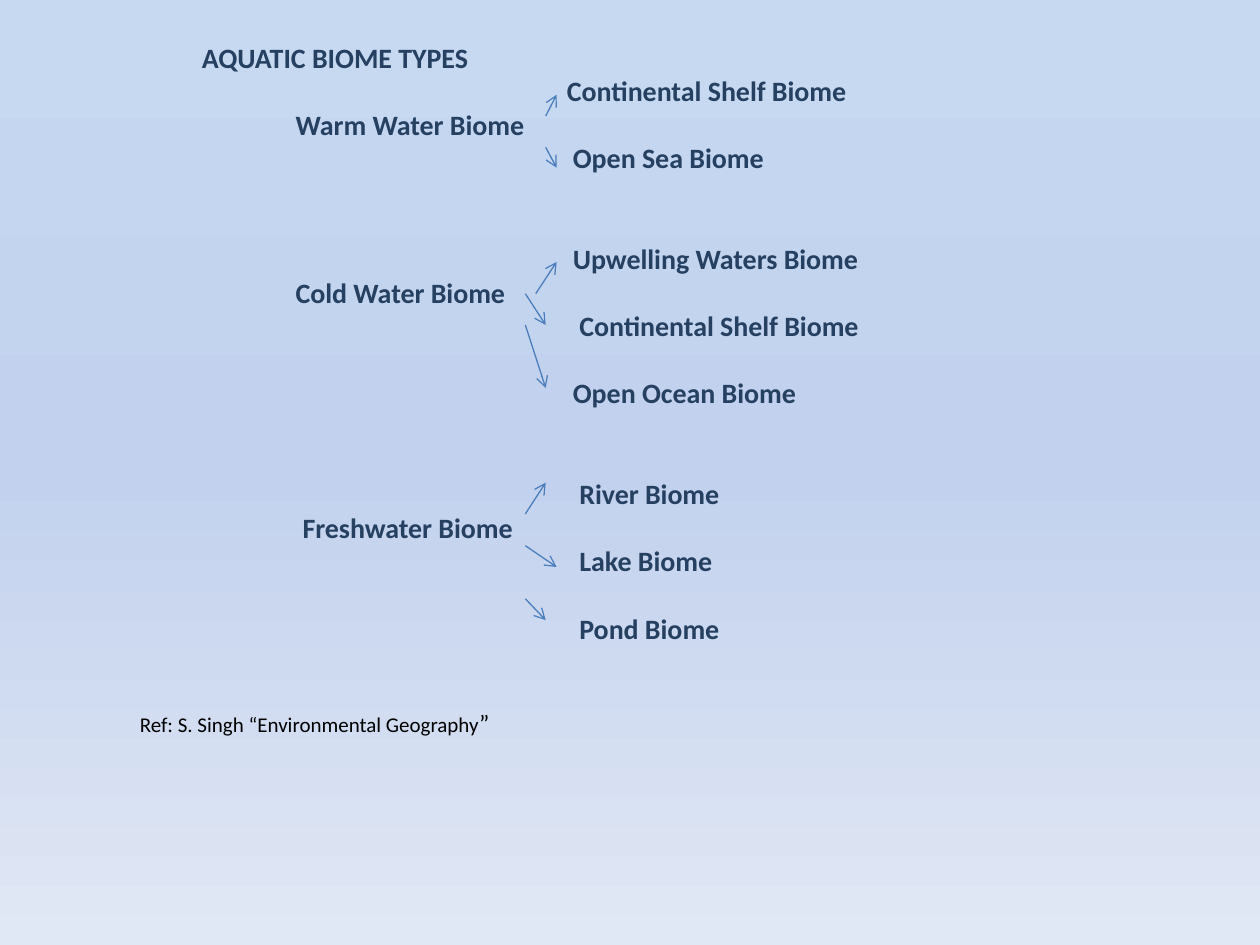
from copy import deepcopy

from lxml.etree import SubElement
from pptx import Presentation
from pptx.dml.color import RGBColor as Rgb
from pptx.enum.shapes import MSO_CONNECTOR as Connector
from pptx.enum.text import MSO_ANCHOR as Anchor, PP_ALIGN as Align
from pptx.oxml.ns import qn
from pptx.util import Cm, Pt

# Content: (indent in cm, blank lines above, text)
OUTLINE = [
    (2.17, 0, "AQUATIC BIOME TYPES"),
    (9.53, 0, "Continental Shelf Biome"),
    (4.06, 0, "Warm Water Biome"),
    (9.65, 0, "Open Sea Biome"),
    (9.65, 2, "Upwelling Waters Biome"),
    (4.06, 0, "Cold Water Biome"),
    (9.78, 0, "Continental Shelf Biome"),
    (9.65, 1, "Open Ocean Biome"),
    (9.78, 2, "River Biome"),
    (4.20, 0, "Freshwater Biome"),
    (9.78, 0, "Lake Biome"),
    (9.78, 1, "Pond Biome"),
]
REFERENCE = ("Ref: S. Singh “Environmental Geography", "”")
REFERENCE_INDENT, REFERENCE_GAP = 0.92, 1.77

# Arrows from each biome to its types: (x1, y1, x2, y2) in cm
ARROWS = [
    (11.00, 2.34, 11.22, 1.91),
    (11.00, 2.97, 11.22, 3.38),
    (10.80, 5.92, 11.22, 5.28),
    (10.59, 5.92, 11.00, 6.55),
    (10.59, 6.55, 11.00, 7.82),
    (10.59, 10.36, 11.00, 9.73),
    (10.59, 11.00, 11.22, 11.43),
    (10.59, 12.07, 11.00, 12.50),
]

THEME = {
    "font": "Calibri",
    "heading": Rgb.from_string("254061"),
    "reference": Rgb.from_string("000000"),
    "arrow": Rgb.from_string("4B7EBC"),
    "background": [(0, "C6D9F1"), (0.5, "C2D1ED"), (1, "E1E8F5")],
    "heading_size": 16,
    "reference_sizes": (12, 14),
    "line_pitch": 19.2,
    "arrow_width": 0.75,
}


def paint_background(slide):
    fill = slide.background.fill
    fill.gradient()
    fill.gradient_angle = 270
    stop_list = slide.element.find(".//" + qn("a:gsLst"))
    stop_list.append(deepcopy(stop_list[0]))
    for stop, (position, color) in zip(fill.gradient_stops, THEME["background"]):
        stop.position = position
        stop.color.rgb = Rgb.from_string(color)


def place_line(paragraph, indent, blank_lines):
    paragraph.alignment = Align.LEFT
    paragraph.line_spacing = Pt(THEME["line_pitch"])
    paragraph.space_before = Pt(THEME["line_pitch"] * blank_lines)
    properties = paragraph._p.get_or_add_pPr()
    properties.set("marL", str(Cm(indent)))
    properties.set("indent", "0")


def style_run(run, size, color, bold):
    run.font.name = THEME["font"]
    run.font.size = Pt(size)
    run.font.color.rgb = color
    run.font.bold = bold


def add_outline(slide):
    frame = slide.shapes.add_textbox(Cm(1.9), Cm(0.81), Cm(21.6), Cm(14.1)).text_frame
    frame.word_wrap = True
    frame.vertical_anchor = Anchor.TOP
    frame.margin_left = frame.margin_right = frame.margin_top = frame.margin_bottom = 0

    # Heading, biomes and their types
    frame.text = "\n".join(label for _, _, label in OUTLINE)
    for paragraph, (indent, blank_lines, _) in zip(frame.paragraphs, OUTLINE):
        place_line(paragraph, indent, blank_lines)
        style_run(paragraph.runs[0], THEME["heading_size"], THEME["heading"], True)

    # Reference, with its larger closing quote
    reference = frame.add_paragraph()
    place_line(reference, REFERENCE_INDENT, REFERENCE_GAP)
    for words, size in zip(REFERENCE, THEME["reference_sizes"]):
        run = reference.add_run()
        run.text = words
        style_run(run, size, THEME["reference"], False)


def add_arrow(slide, ends):
    arrow = slide.shapes.add_connector(Connector.STRAIGHT, *map(Cm, ends))
    arrow.line.color.rgb = THEME["arrow"]
    arrow.line.width = Pt(THEME["arrow_width"])
    SubElement(arrow.line._get_or_add_ln(), qn("a:tailEnd"), type="arrow")
    SubElement(arrow._element.spPr, qn("a:effectLst"))


def main():
    deck = Presentation()
    deck.slide_width, deck.slide_height = Cm(25.4), Cm(19.05)
    slide = deck.slides.add_slide(deck.slide_layouts[6])
    paint_background(slide)
    add_outline(slide)
    for ends in ARROWS:
        add_arrow(slide, ends)
    deck.save("out.pptx")


if __name__ == "__main__":
    main()
